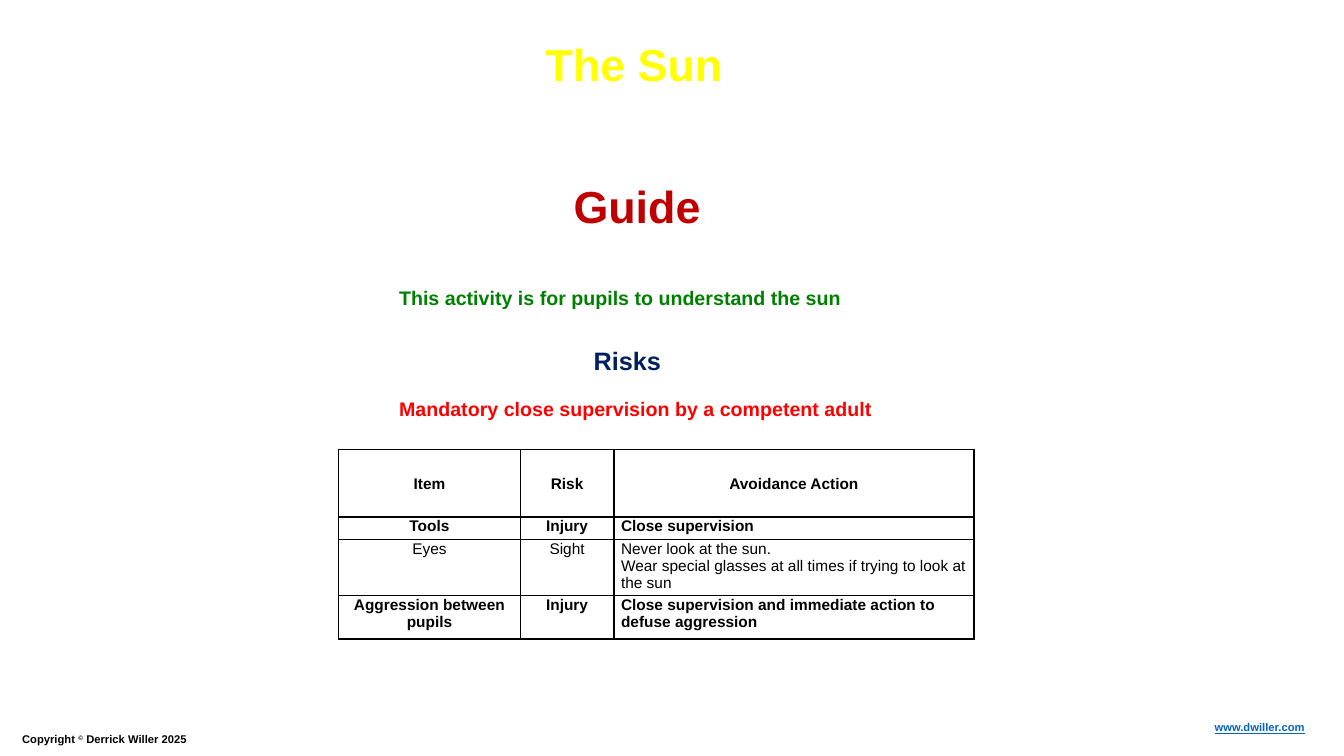
from dataclasses import dataclass
from typing import NamedTuple

from lxml.etree import SubElement
from pptx import Presentation
from pptx.dml.color import RGBColor
from pptx.enum.text import MSO_ANCHOR, MSO_AUTO_SIZE, PP_ALIGN
from pptx.oxml import parse_xml
from pptx.oxml.ns import nsdecls, qn
from pptx.util import Pt

EMU_PER_PX = 9144


@dataclass(frozen=True)
class Theme:
    """Colours, type sizes and font of the slide."""
    font: str = "Arial"
    ink: str = "000000"
    sun: str = "FFFF00"
    sun_edge: str = "ED7D31"
    guide: str = "C00000"
    purpose: str = "008000"
    risks: str = "002060"
    warning: str = "FF0000"
    link: str = "0563C1"
    heading_size: int = 32
    subheading_size: int = 18
    statement_size: int = 14
    table_size: int = 11
    footer_size: int = 8


class Box(NamedTuple):
    """A rectangle in px."""
    left: int
    top: int
    width: int
    height: int


THEME = Theme()
COLUMN_WIDTHS = (180, 93, 357)
ROW_HEIGHTS = (67, 22, 56, 43)
RISK_ROWS = (
    ("Item", "Risk", "Avoidance Action"),
    ("Tools", "Injury", "Close supervision"),
    ("Eyes", "Sight", "Never look at the sun.\n"
     "Wear special glasses at all times if trying to look at the sun"),
    ("Aggression between pupils", "Injury",
     "Close supervision and immediate action to defuse aggression"),
)


def px(length):
    """Turn px into EMU."""
    return length * EMU_PER_PX


def style_run(run, size, colour, bold=True):
    """Format one run in the theme font."""
    run.font.name = THEME.font
    run.font.size = Pt(size)
    run.font.bold = bold
    run.font.color.rgb = RGBColor.from_string(colour)


def add_line(slide, box, words, size, colour, align=PP_ALIGN.LEFT, wrap=True):
    """Place a text box with one formatted paragraph and return that paragraph."""
    frame = slide.shapes.add_textbox(*map(px, box)).text_frame
    frame.word_wrap = wrap
    line = frame.paragraphs[0]
    line.alignment = align
    for word in words:
        run = line.add_run()
        run.text = word
        style_run(run, size, colour)
    return line


def add_title(slide, box):
    """Place the outlined slide title."""
    title = slide.shapes.title
    title.left, title.top, title.width, title.height = map(px, box)
    frame = title.text_frame
    frame.text = "The Sun"
    frame.word_wrap = False
    frame.auto_size = MSO_AUTO_SIZE.NONE
    frame.vertical_anchor = MSO_ANCHOR.TOP
    frame.paragraphs[0].alignment = PP_ALIGN.CENTER
    run = frame.paragraphs[0].runs[0]
    style_run(run, THEME.heading_size, THEME.sun)
    run.font._element.insert(0, parse_xml(
        f'<a:ln {nsdecls("a")} w="{Pt(1.75)}"><a:solidFill>'
        f'<a:srgbClr val="{THEME.sun_edge}"/></a:solidFill></a:ln>'))


def add_guide(slide, box):
    """Stack the guide headings and statements in the box."""
    left, top, width, _ = box
    add_line(slide, Box(left + 173, top, 147, 64), ["Guide"],
             THEME.heading_size, THEME.guide, wrap=False)
    add_line(slide, Box(left, top + 107, width, 34),
             ["This activity is for pupils to understand the sun"],
             THEME.statement_size, THEME.purpose)
    add_line(slide, Box(left + 193, top + 166, 88, 40), ["Risks"],
             THEME.subheading_size, THEME.risks, wrap=False)
    add_line(slide, Box(left, top + 217, width, 34),
             ["Mandatory close supervision by a competent adult"],
             THEME.statement_size, THEME.warning)


def add_borders(cell):
    """Draw a thin line on each side of a cell."""
    properties = cell._tc.get_or_add_tcPr()
    for side in ("lnL", "lnR", "lnT", "lnB"):
        line = SubElement(properties, qn(f"a:{side}"), w=str(Pt(1)))
        fill = SubElement(line, qn("a:solidFill"))
        SubElement(fill, qn("a:srgbClr"), val=THEME.ink)


def fill_cell(cell, text, header, centred, bold):
    """Write and format one table cell."""
    add_borders(cell)
    cell.fill.background()
    cell.margin_left = cell.margin_right = px(7)
    cell.margin_top, cell.margin_bottom = px(1), 0
    cell.vertical_anchor = MSO_ANCHOR.MIDDLE if header else MSO_ANCHOR.TOP
    cell.text_frame.text = text
    for paragraph in cell.text_frame.paragraphs:
        paragraph.alignment = PP_ALIGN.CENTER if centred else PP_ALIGN.LEFT
        for run in paragraph.runs:
            style_run(run, THEME.table_size, THEME.ink, bold)


def add_risk_table(slide, box):
    """Place the table of risks and avoidance actions."""
    table = slide.shapes.add_table(
        len(RISK_ROWS), len(COLUMN_WIDTHS), *map(px, box)).table
    table.first_row = table.horz_banding = False
    for column, width in zip(table.columns, COLUMN_WIDTHS):
        column.width = px(width)
    for row, height in zip(table.rows, ROW_HEIGHTS):
        row.height = px(height)
    for r, texts in enumerate(RISK_ROWS):
        for c, text in enumerate(texts):
            fill_cell(table.cell(r, c), text, header=r == 0,
                      centred=r == 0 or c < 2, bold=texts[0] != "Eyes")


def add_footer(slide, box):
    """Place the copyright line at the left and the address at the right."""
    left, top, width, height = box
    notice = add_line(slide, Box(left, top + 12, 565, 24),
                      ["Copyright ", "©", " Derrick Willer 2025"],
                      THEME.footer_size, THEME.ink)
    notice.runs[1].font._element.set("baseline", "30000")
    address = add_line(slide, Box(left + width - 134, top, 134, 24),
                       ["www.dwiller.com"], THEME.footer_size, THEME.link,
                       align=PP_ALIGN.RIGHT)
    address.runs[0].font.underline = True


def main():
    """Build and save the slide."""
    deck = Presentation()
    deck.slide_width, deck.slide_height = px(1333), px(750)
    slide = deck.slides.add_slide(deck.slide_layouts.get_by_name("Title Only"))
    add_title(slide, Box(414, 31, 430, 64))
    add_guide(slide, Box(386, 172, 891, 251))
    add_risk_table(slide, Box(336, 446, sum(COLUMN_WIDTHS), sum(ROW_HEIGHTS)))
    add_footer(slide, Box(12, 710, 1292, 36))
    deck.save("out.pptx")


if __name__ == "__main__":
    main()
